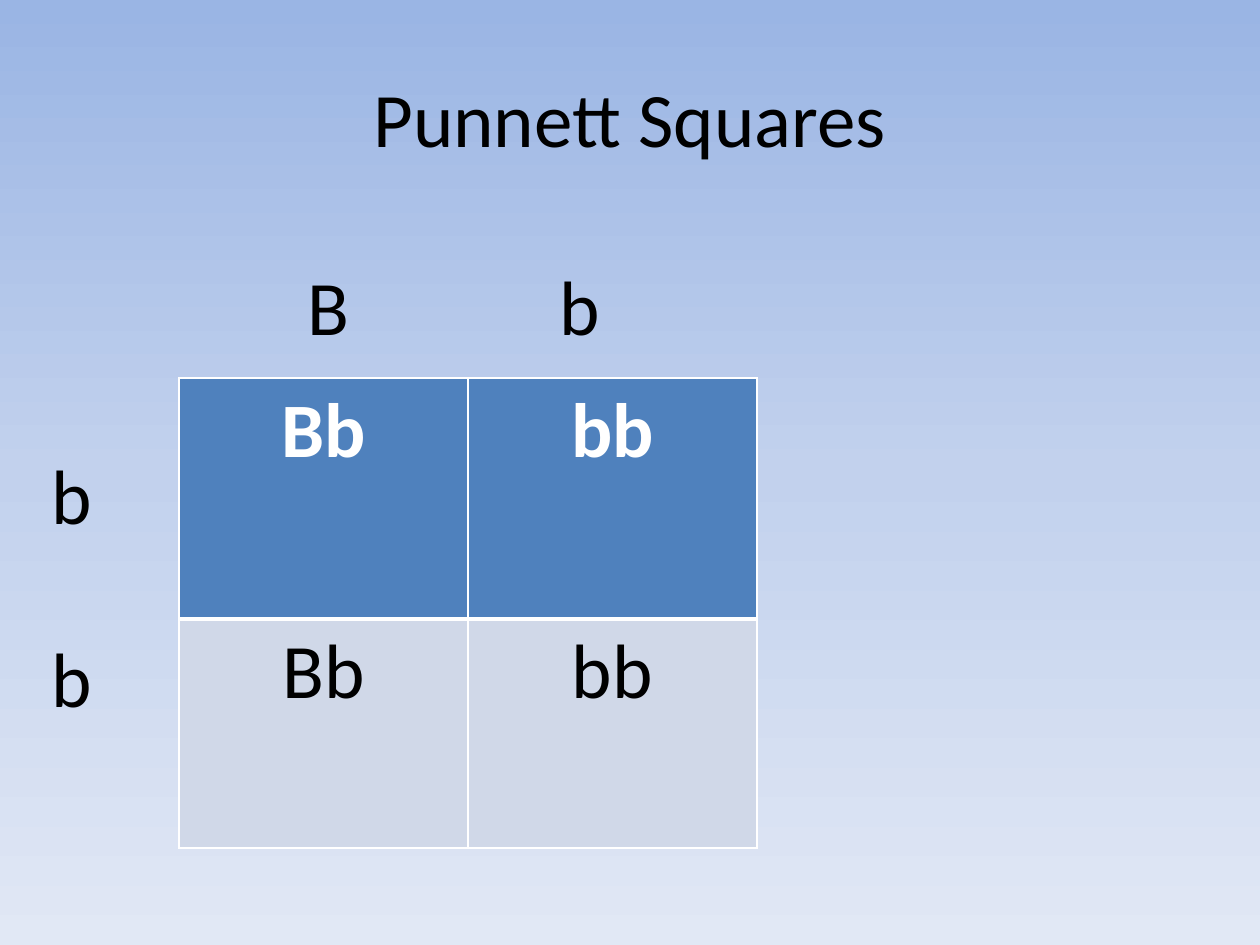
"""Build a Punnett square slide."""
from dataclasses import dataclass

from lxml.etree import SubElement
from pptx import Presentation
from pptx.dml.color import RGBColor as Rgb
from pptx.enum.text import MSO_ANCHOR as Anchor, PP_ALIGN as Align
from pptx.oxml import parse_xml
from pptx.oxml.ns import nsdecls, qn
from pptx.util import Pt

TITLE = "Punnett Squares"
TOP_ALLELES = ["B", "b"]
SIDE_ALLELES = ["b", "b"]
OFFSPRING = [["Bb", "bb"], ["Bb", "bb"]]

TITLE_BOX = (63, 38, 1134, 157)
TOP_BOX = (168, 252, 536, 106)
SIDE_BOX = (39, 441, 63, 425)
SQUARE_AT = (179, 378)
COLUMN_WIDTH = 289
ROW_HEIGHTS = [241, 229]
TOP_INSET, TOP_PITCH = 139, 252


@dataclass(frozen=True)
class Theme:
    font: str = "Calibri"
    size: int = 44
    allele_gap: int = 52
    ink: str = "000000"
    grid: str = "FFFFFF"
    thin: int = 1
    thick: int = 3
    row_fills: tuple = ("4F81BD", "D0D8E8")
    row_inks: tuple = ("FFFFFF", "000000")
    sky: tuple = ((0, "9AB5E4"), (50, "C2D1ED"), (100, "E1E8F5"))


THEME = Theme()


def px(length):
    return round(length * 914400 / 126)


def paint_background(slide):
    fill = slide.background.fill
    fill.gradient()
    fill.gradient_angle = 270
    stops = slide.element.find(".//" + qn("a:gsLst"))
    stops.clear()
    for position, color in THEME.sky:
        stop = SubElement(stops, qn("a:gs"), pos=str(position * 1000))
        SubElement(stop, qn("a:srgbClr"), val=color)


def write(paragraph, text, align=Align.LEFT, color=THEME.ink, bold=False):
    paragraph.alignment = align
    run = paragraph.add_run()
    run.text = text
    run.font.name = THEME.font
    run.font.size = Pt(THEME.size)
    run.font.bold = bold
    run.font.color.rgb = Rgb.from_string(color)


def add_frame(slide, box):
    frame = slide.shapes.add_textbox(*map(px, box)).text_frame
    frame.word_wrap = True
    return frame


def add_border(cell, side, points):
    cell._tc.get_or_add_tcPr().append(parse_xml(
        f'<a:{side} {nsdecls("a")} w="{Pt(points)}"><a:solidFill>'
        f'<a:srgbClr val="{THEME.grid}"/></a:solidFill></a:{side}>'))


def add_title(slide):
    frame = add_frame(slide, TITLE_BOX)
    frame.vertical_anchor = Anchor.MIDDLE
    write(frame.paragraphs[0], TITLE, Align.CENTER)


def add_top_alleles(slide):
    frame = add_frame(slide, TOP_BOX)
    frame.margin_left = px(TOP_INSET)
    heading = frame.paragraphs[0]
    write(heading, "\t".join(TOP_ALLELES))
    tabs = SubElement(heading._p.get_or_add_pPr(), qn("a:tabLst"))
    for column in range(1, len(TOP_ALLELES)):
        SubElement(tabs, qn("a:tab"), pos=str(px(column * TOP_PITCH)), algn="l")


def add_side_alleles(slide):
    frame = add_frame(slide, SIDE_BOX)
    for row, allele in enumerate(SIDE_ALLELES):
        paragraph = frame.add_paragraph() if row else frame.paragraphs[0]
        paragraph.space_before = Pt(THEME.allele_gap if row else 0)
        write(paragraph, allele)


def add_square(slide):
    rows, columns = len(OFFSPRING), len(OFFSPRING[0])
    size = (columns * COLUMN_WIDTH, sum(ROW_HEIGHTS))
    square = slide.shapes.add_table(
        rows, columns, *map(px, SQUARE_AT + size)).table
    square.horz_banding = False
    for column in square.columns:
        column.width = px(COLUMN_WIDTH)
    for r, genotypes in enumerate(OFFSPRING):
        square.rows[r].height = px(ROW_HEIGHTS[r])
        for c, genotype in enumerate(genotypes):
            cell = square.cell(r, c)
            write(cell.text_frame.paragraphs[0], genotype, Align.CENTER,
                  THEME.row_inks[r], bold=r == 0)
            add_border(cell, "lnL", THEME.thin)
            add_border(cell, "lnR", THEME.thin)
            add_border(cell, "lnT", THEME.thick if r else THEME.thin)
            add_border(cell, "lnB", THEME.thin if r else THEME.thick)
            cell.fill.solid()
            cell.fill.fore_color.rgb = Rgb.from_string(THEME.row_fills[r])


def main():
    deck = Presentation()
    deck.slide_width, deck.slide_height = px(1260), px(945)
    slide = deck.slides.add_slide(deck.slide_layouts[6])
    paint_background(slide)
    add_title(slide)
    add_square(slide)
    add_side_alleles(slide)
    add_top_alleles(slide)
    deck.save("out.pptx")


if __name__ == "__main__":
    main()
